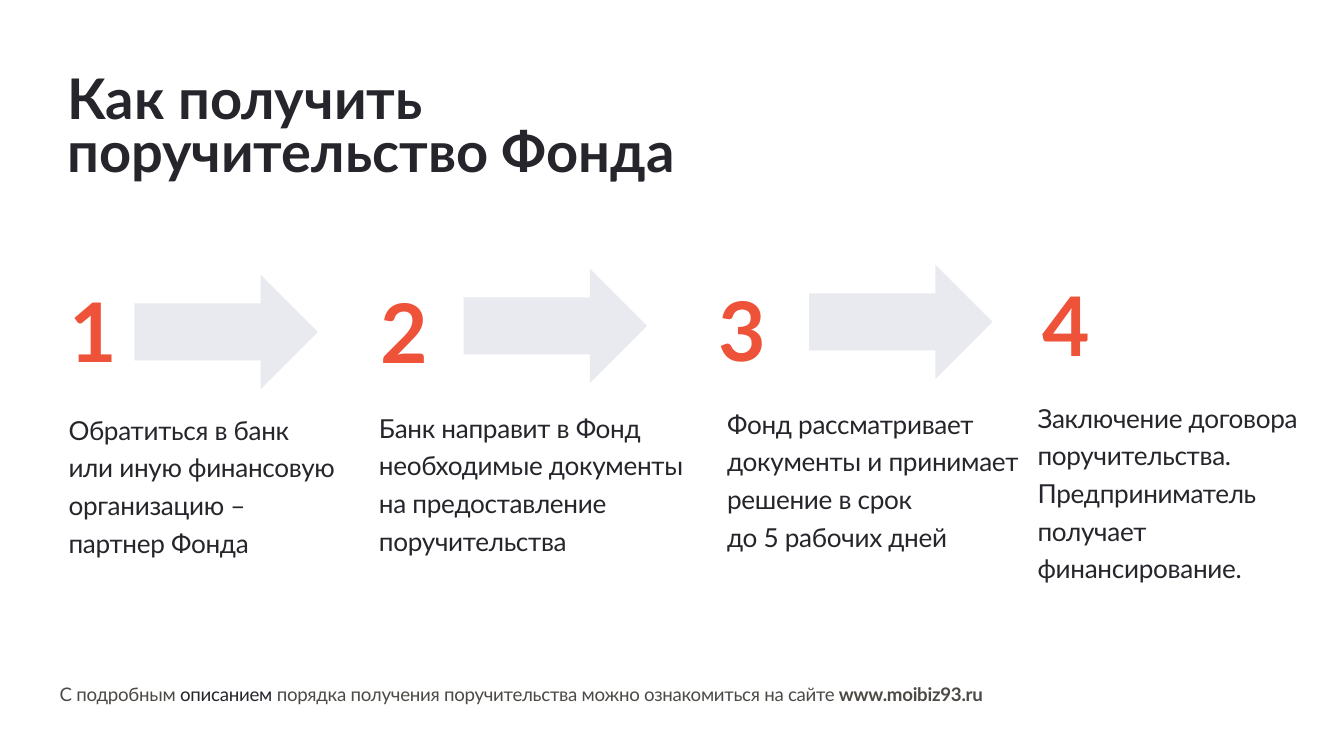
from pptx import Presentation
from pptx.dml.color import RGBColor
from pptx.enum.shapes import MSO_SHAPE
from pptx.enum.text import MSO_ANCHOR, MSO_AUTO_SIZE, PP_ALIGN
from pptx.util import Inches, Pt

FONT = "Lato"
COLORS = {"text": "25252B", "muted": "4D4A46", "accent": "EE5238", "arrow": "E9E9F0"}

# Content: "\v" is a line break, "\n" starts a new paragraph
TITLE = "Как получить \vпоручительство Фонда"
STEPS = [
    {"text": "Обратиться в банк \vили иную финансовую организацию – \vпартнер Фонда",
     "text_box": (1.02, 6.07, 4.94, 2.21), "number_at": (0.94, 4.12), "arrow_at": (2, 4.09)},
    {"text": "Банк направит в Фонд необходимые документы \vна предоставление поручительства",
     "text_box": (5.64, 6.04, 5.47, 2.21), "number_at": (5.57, 4.14), "arrow_at": (6.9, 4)},
    {"text": "Фонд рассматривает документы и принимает решение в срок \vдо 5 рабочих дней",
     "text_box": (10.82, 5.98, 5.15, 2.21), "number_at": (10.59, 4.11), "arrow_at": (12.04, 3.94)},
    {"text": "Заключение договора поручительства. Предприниматель получает\nфинансирование.",
     "text_box": (15.44, 5.89, 4.56, 2.78), "number_at": (15.41, 4.04), "arrow_at": None},
]
FOOTNOTE = [
    ("С подробным ", "muted", False),
    ("описанием", "text", False),
    (" порядка получения поручительства можно ознакомиться на сайте ", "muted", False),
    ("www.moibiz93.ru", "muted", True),
]
NUMBER_SIZE = (1.33, 1.58)
ARROW_SIZE = (2.73, 1.7)


def format_run(run, size, color, bold=False, spacing=0):
    run.font.name = FONT
    run.font.size = Pt(size)
    run.font.bold = bold
    run.font.color.rgb = RGBColor.from_string(COLORS[color])
    if spacing:
        run.font._element.set("spc", str(round(spacing * 100)))


def prepare_frame(shape, margins=True):
    frame = shape.text_frame
    frame.word_wrap = True
    frame.auto_size = MSO_AUTO_SIZE.SHAPE_TO_FIT_TEXT
    frame.vertical_anchor = MSO_ANCHOR.TOP
    if not margins:
        frame.margin_left = frame.margin_right = 0
        frame.margin_top = frame.margin_bottom = 0
    return frame


def add_text(slide, box, text, size, color, bold=False, spacing=0,
             line_spacing=1.0, margins=True):
    shape = slide.shapes.add_textbox(*map(Inches, box))
    frame = prepare_frame(shape, margins)
    frame.text = text
    for paragraph in frame.paragraphs:
        paragraph.line_spacing = line_spacing
        for run in paragraph.runs:
            format_run(run, size, color, bold, spacing)


def add_title(slide):
    title = slide.shapes.title
    title.left, title.top, title.width, title.height = map(Inches, (1, 1.16, 10.04, 1.6))
    frame = prepare_frame(title, margins=False)
    frame.text = TITLE
    paragraph = frame.paragraphs[0]
    paragraph.alignment = PP_ALIGN.LEFT
    paragraph.line_spacing = Pt(56.7)
    for run in paragraph.runs:
        format_run(run, 60, "text", bold=True)


def add_arrow(slide, position):
    arrow = slide.shapes.add_shape(MSO_SHAPE.RIGHT_ARROW, *map(Inches, position + ARROW_SIZE))
    arrow.shadow.inherit = False
    arrow.fill.solid()
    arrow.fill.fore_color.rgb = RGBColor.from_string(COLORS["arrow"])
    arrow.line.fill.background()


def add_footnote(slide):
    shape = slide.shapes.add_textbox(*map(Inches, (0.79, 10.04, 15.49, 0.47)))
    paragraph = prepare_frame(shape).paragraphs[0]
    paragraph.line_spacing = 1.2
    for text, color, bold in FOOTNOTE:
        run = paragraph.add_run()
        run.text = text
        format_run(run, 20, color, bold, spacing=-0.3)


def main():
    presentation = Presentation()
    presentation.slide_width = Inches(20)
    presentation.slide_height = Inches(11.25)
    slide = presentation.slides.add_slide(presentation.slide_layouts[5])

    add_title(slide)

    # Numbered steps with arrows between them
    for number, step in enumerate(STEPS, start=1):
        if step["arrow_at"]:
            add_arrow(slide, step["arrow_at"])
        add_text(slide, step["number_at"] + NUMBER_SIZE, str(number), 88, "accent",
                 bold=True, spacing=1.4)
        add_text(slide, step["text_box"], step["text"], 28, "text", spacing=-0.3,
                 line_spacing=1.2, margins=False)

    add_footnote(slide)
    presentation.save("out.pptx")


if __name__ == "__main__":
    main()
